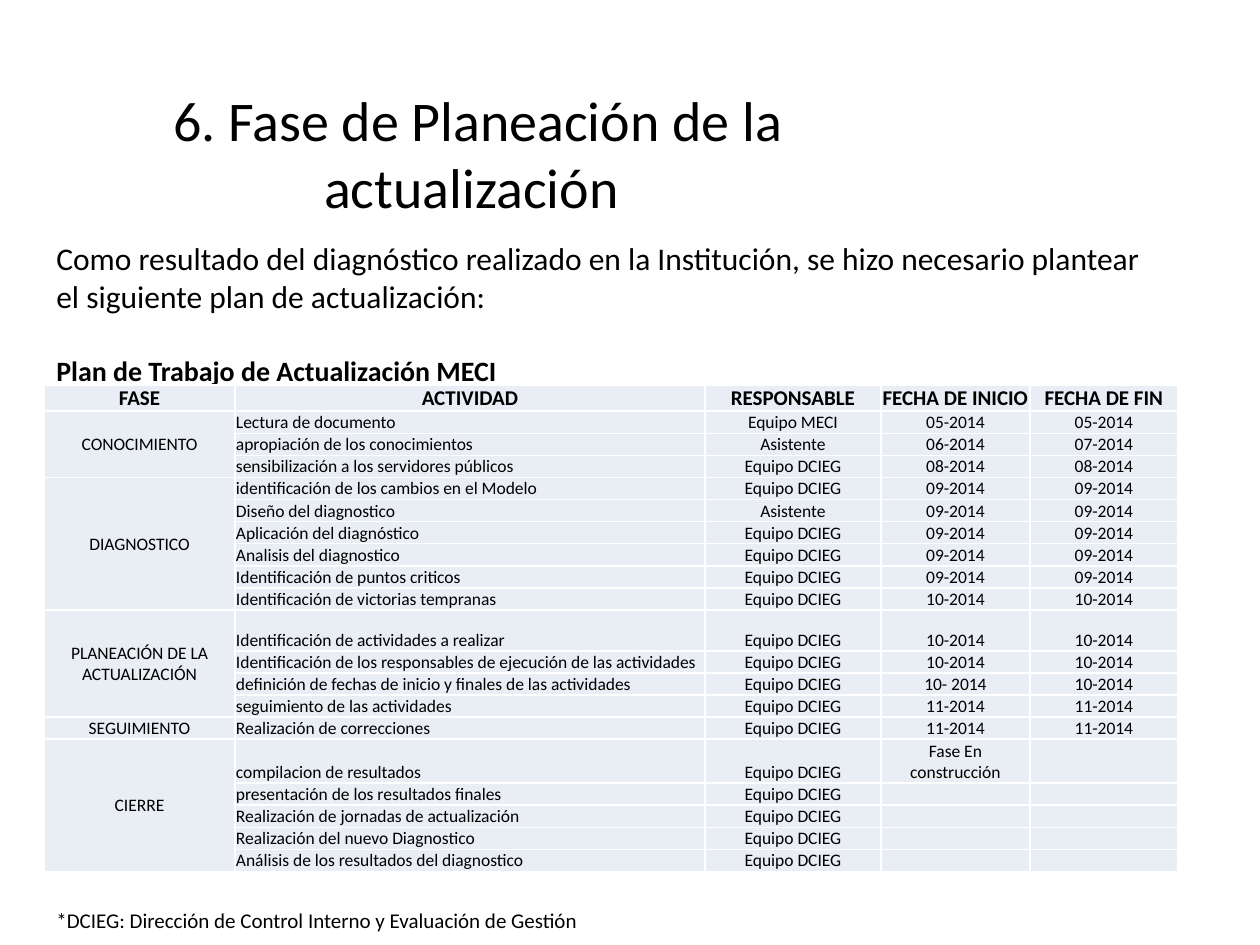
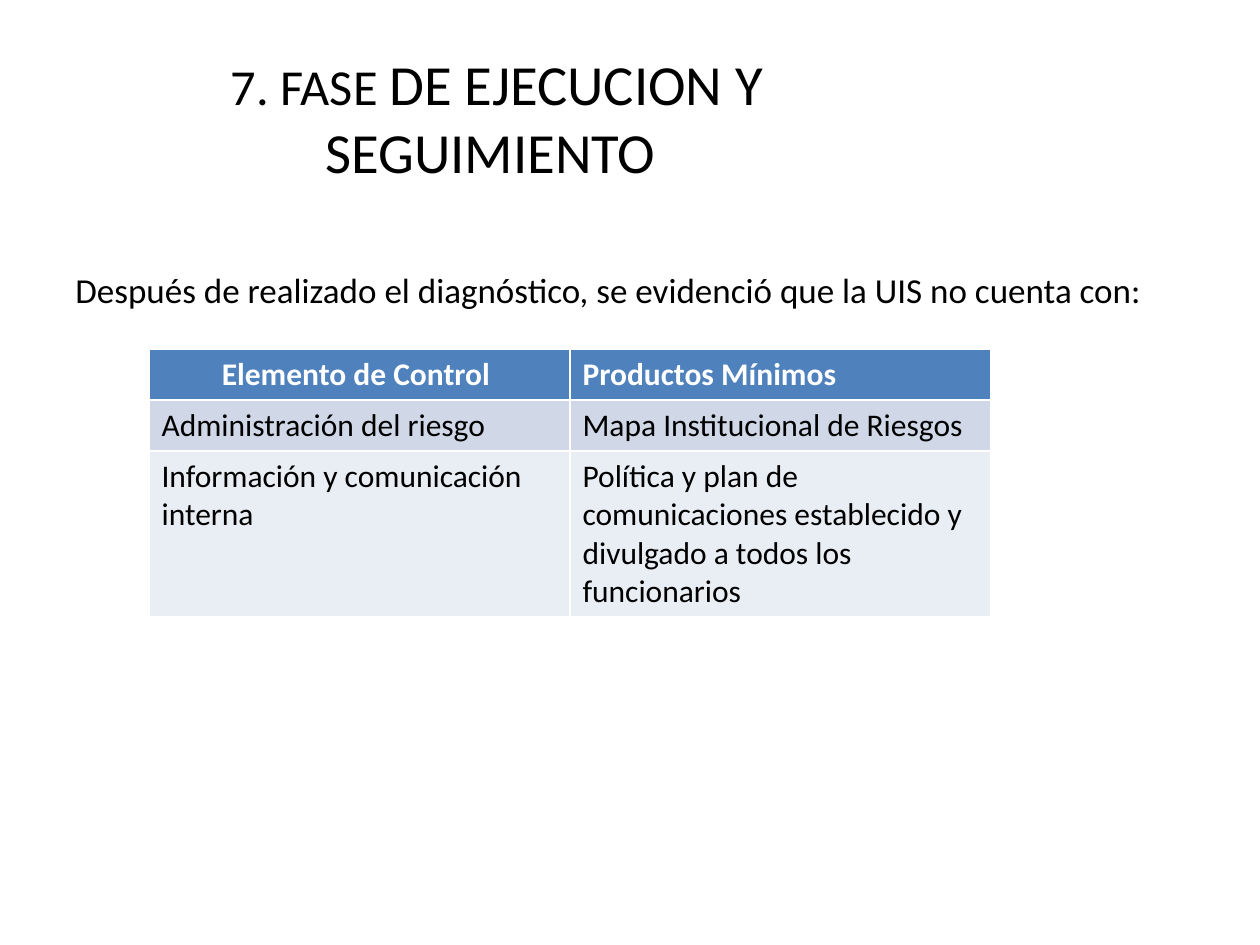
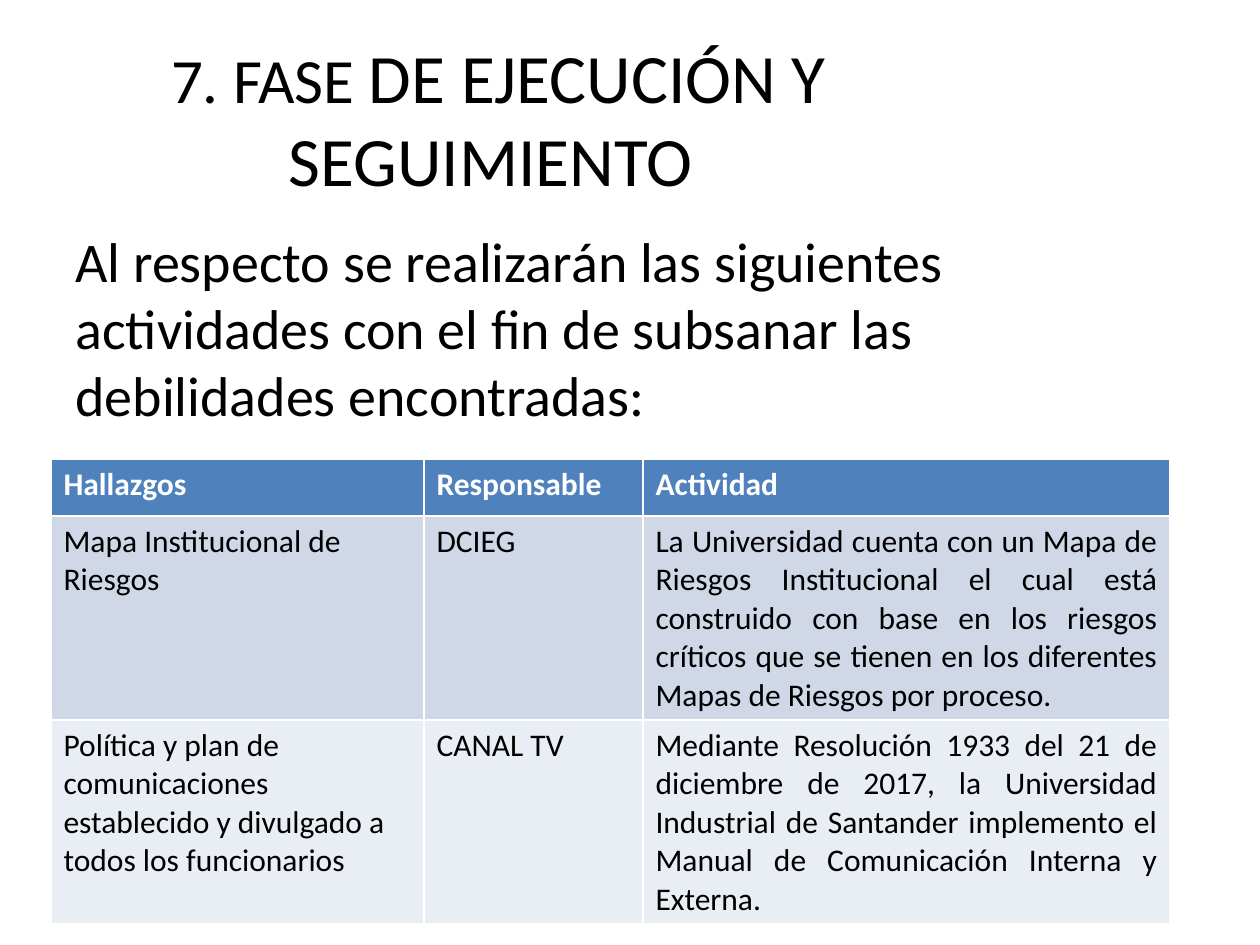
from pptx import Presentation
from pptx.dml.color import RGBColor
from pptx.enum.text import MSO_ANCHOR as Anchor, PP_ALIGN as Align
from pptx.util import Inches, Pt

PX = 7257  # EMU in one px, 126 px to the inch
FONT = "Calibri"
BLACK, WHITE = "000000", "FFFFFF"
HEADER_BLUE, BAND_DARK, BAND_LIGHT = "4F81BD", "D0D8E8", "E9EDF4"


def write(paragraph, runs, color=BLACK, **formats):
    """Add (text, size, bold) runs and set the paragraph's formats."""
    for name, value in formats.items():
        setattr(paragraph, name, value)
    for text, size, bold in runs:
        run = paragraph.add_run()
        run.text = text
        values = {"name": FONT, "size": Pt(size), "bold": bold}
        for name, value in values.items():
            setattr(run.font, name, value)
        run.font.color.rgb = RGBColor.from_string(color)


def add_table(slide, left, top, widths, heights):
    """Add a table with plain cells; the table style draws its white borders."""
    table = slide.shapes.add_table(
        len(heights), len(widths), left * PX, top * PX,
        sum(widths) * PX, sum(heights) * PX).table
    table.horz_banding = False
    for column, width in zip(table.columns, widths):
        column.width = width * PX
    for row, height in zip(table.rows, heights):
        row.height = height * PX
    return table


presentation = Presentation()
presentation.slide_width, presentation.slide_height = Inches(10), Inches(7.5)
blank = presentation.slide_layouts[6]
planning, missing, actions = [presentation.slides.add_slide(blank) for _ in range(3)]

# Titles and body texts: slide, box, anchor, paragraphs as (runs, formats)
centred = {"alignment": Align.CENTER}
texts = [
    (planning, (44, 79, 868, 217), Anchor.TOP, [
        ([("6. Fase de Planeación de la actualización ", 32, False)], centred)]),
    (planning, (44, 233, 1134, 165), Anchor.TOP, [
        ([("Como resultado del diagnóstico realizado en la Institución, se hizo "
           "necesario plantear el siguiente plan de actualización:", 18, False)], {}),
        ([("Plan de Trabajo de Actualización MECI", 16, True)],
         {"space_before": Pt(22)})]),
    (planning, (44, 901, 993, 38), Anchor.TOP, [
        ([("*DCIEG: Dirección de Control Interno y Evaluación de Gestión", 12, False)], {})]),
    (missing, (63, 38, 868, 158), Anchor.MIDDLE, [
        ([("7. FASE ", 28.8, False), ("DE EJECUCION Y SEGUIMIENTO ", 32.4, False)], centred)]),
    (missing, (63, 262, 1134, 630), Anchor.TOP, [
        ([("Después de realizado el diagnóstico, se evidenció que la UIS no cuenta con:",
           20, False)], {})]),
    (actions, (63, 38, 871, 158), Anchor.MIDDLE, [
        ([("7. FASE ", 36, False), ("DE EJECUCIÓN Y SEGUIMIENTO ", 39.6, False)], centred)]),
    (actions, (63, 220, 1134, 624), Anchor.TOP, [
        ([("Al respecto se realizarán las siguientes actividades con el fin de "
           "subsanar las debilidades encontradas:", 32, False)], {})]),
]
for slide, box, anchor, paragraphs in texts:
    frame = slide.shapes.add_textbox(*[length * PX for length in box]).text_frame
    frame.word_wrap = True
    frame.vertical_anchor = anchor
    for index, (runs, formats) in enumerate(paragraphs):
        paragraph = frame.add_paragraph() if index else frame.paragraphs[0]
        write(paragraph, runs, **formats)

# Work plan: each phase with its activities, people in charge and dates
TEAM = "Equipo DCIEG"
phases = [
    ("CONOCIMIENTO", [
        ("Lectura de documento", "Equipo MECI", "05-2014", "05-2014"),
        ("apropiación de los conocimientos", "Asistente", "06-2014", "07-2014"),
        ("sensibilización a los servidores públicos", TEAM, "08-2014", "08-2014")]),
    ("DIAGNOSTICO", [
        ("identificación de los cambios en el Modelo", TEAM, "09-2014", "09-2014"),
        ("Diseño del diagnostico", "Asistente", "09-2014", "09-2014"),
        ("Aplicación del diagnóstico", TEAM, "09-2014", "09-2014"),
        ("Analisis del diagnostico", TEAM, "09-2014", "09-2014"),
        ("Identificación de puntos criticos", TEAM, "09-2014", "09-2014"),
        ("Identificación de victorias tempranas", TEAM, "10-2014", "10-2014")]),
    ("PLANEACIÓN DE LA ACTUALIZACIÓN", [
        ("Identificación de actividades a realizar", TEAM, "10-2014", "10-2014"),
        ("Identificación de los responsables de ejecución de las actividades",
         TEAM, "10-2014", "10-2014"),
        ("definición de fechas de inicio y finales de las actividades",
         TEAM, "10- 2014", "10-2014"),
        ("seguimiento de las actividades", TEAM, "11-2014", "11-2014")]),
    ("SEGUIMIENTO", [
        ("Realización de correcciones", TEAM, "11-2014", "11-2014")]),
    ("CIERRE", [
        ("compilacion de resultados", TEAM, "Fase En construcción", ""),
        ("presentación de los resultados finales", TEAM, "", ""),
        ("Realización de jornadas de actualización", TEAM, "", ""),
        ("Realización del nuevo Diagnostico", TEAM, "", ""),
        ("Análisis de los resultados del diagnostico", TEAM, "", "")]),
]
plan_rows = [("FASE", "ACTIVIDAD", "RESPONSABLE", "FECHA DE INICIO", "FECHA DE FIN")]
phase_spans = []
for phase, activities in phases:
    phase_spans.append((len(plan_rows), len(plan_rows) + len(activities) - 1))
    for index, activity in enumerate(activities):
        plan_rows.append(("" if index else phase, *activity))

plan_heights = [26] + [22] * 9 + [41] + [22] * 4 + [44] + [22] * 4
plan = add_table(planning, 44, 385, [191, 470, 176, 149, 148], plan_heights)
plan.first_row = False
for row, values in enumerate(plan_rows):
    for column, value in enumerate(values):
        cell = plan.cell(row, column)
        cell.fill.solid()
        cell.fill.fore_color.rgb = RGBColor.from_string(BAND_LIGHT)
        cell.vertical_anchor = Anchor.BOTTOM if row == 0 or column else Anchor.MIDDLE
        cell.margin_left = cell.margin_right = cell.margin_top = PX
        cell.margin_bottom = 0
        paragraph = cell.text_frame.paragraphs[0]
        if value:
            align = Align.LEFT if row and column == 1 else Align.CENTER
            write(paragraph, [(value, 10 if row else 12, row == 0)], alignment=align)
        else:
            paragraph._p.get_or_add_endParaRPr().set("sz", "1000")
for first, last in phase_spans:
    if last > first:
        plan.cell(first, 0).merge(plan.cell(last, 0))

# Banded tables: slide, left, top, widths, heights, rows, aligned cells
policy = ("Política y plan de comunicaciones establecido y divulgado "
          "a todos los funcionarios")
risk_map = "Mapa Institucional de Riesgos"
banded_tables = [
    (missing, 149, 349, [421, 421], [51, 51, 166], [
        ("Elemento de Control ", "Productos Mínimos"),
        ("Administración del riesgo", risk_map),
        ("Información y comunicación interna", policy),
    ], {(0, 0): Align.CENTER}),
    (actions, 51, 459, [373, 219, 527], [57, 204, 204], [
        ("Hallazgos", "Responsable", "Actividad"),
        (risk_map, "DCIEG",
         "La Universidad cuenta con un Mapa de Riesgos Institucional el cual está "
         "construido con base en los riesgos críticos que se tienen en los diferentes "
         "Mapas de Riesgos por proceso."),
        (policy, "CANAL TV",
         "Mediante Resolución 1933 del 21 de diciembre de 2017, la Universidad "
         "Industrial de Santander implemento el Manual de Comunicación Interna y "
         "Externa."),
    ], {(1, 2): Align.JUSTIFY, (2, 2): Align.JUSTIFY}),
]
for slide, left, top, widths, heights, rows, alignments in banded_tables:
    table = add_table(slide, left, top, widths, heights)
    for row, (values, fill) in enumerate(zip(rows, (HEADER_BLUE, BAND_DARK, BAND_LIGHT))):
        for column, value in enumerate(values):
            cell = table.cell(row, column)
            cell.fill.solid()
            cell.fill.fore_color.rgb = RGBColor.from_string(fill)
            write(cell.text_frame.paragraphs[0], [(value, 18, row == 0)],
                  BLACK if row else WHITE,
                  alignment=alignments.get((row, column), Align.LEFT))

presentation.save("out.pptx")
